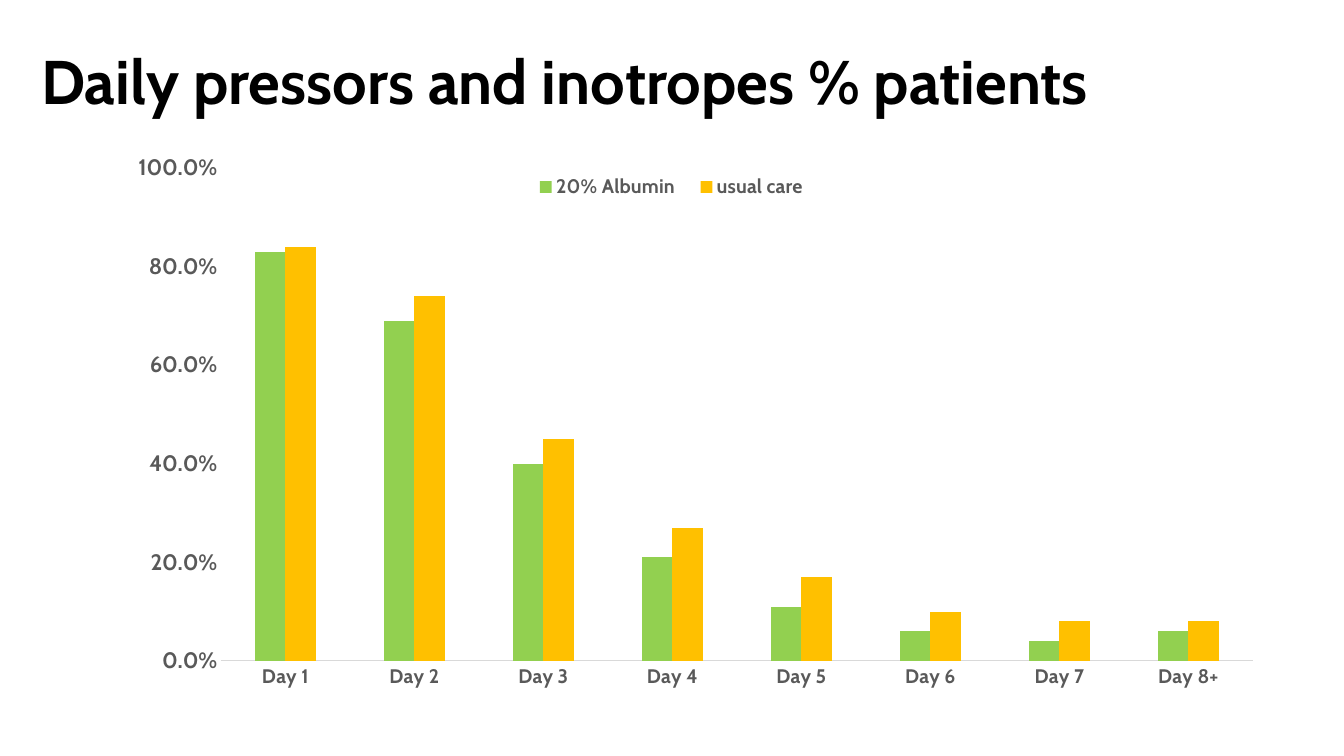
"""Build a slide with a clustered column chart of daily pressor and inotrope use."""
from pptx import Presentation, oxml
from pptx import util as u
from pptx.chart.data import CategoryChartData
from pptx.dml.color import RGBColor
from pptx.enum import chart as kinds, text
from pptx.oxml.ns import nsdecls, qn

PX = 914400 / 100.8
FONT = "Cabin"
GREY = "595959"
CHART_BOX = (115, 143, 1162, 598)
PLOT_BOX = (221, 168, 1032, 493)
LEGEND_BOX = (521, 173, 301, 28)
SERIES = [
    ("20% Albumin", "92D050", (0.83, 0.69, 0.4, 0.21, 0.11, 0.06, 0.04, 0.06)),
    ("usual care", "FFC000", (0.84, 0.74, 0.45, 0.27, 0.17, 0.1, 0.08, 0.08)),
]


def style_font(font, size, colour, bold=True):
    """Set typeface, point size, hex colour and weight."""
    font.name, font.size, font.bold = FONT, u.Pt(size), bold
    font.color.rgb = RGBColor.from_string(colour)


def place_inside(element, index, box, target=""):
    """Give a chart part a fixed layout from its box in slide px."""
    left, top, width, height = CHART_BOX
    fractions = {"x": (box[0] - left) / width, "y": (box[1] - top) / height,
                 "w": box[2] / width, "h": box[3] / height}
    modes = '<c:xMode val="edge"/><c:yMode val="edge"/>'
    sizes = "".join(f'<c:{key} val="{value:.4f}"/>' for key, value in fractions.items())
    for old in element.findall(qn("c:layout")):
        element.remove(old)
    element.insert(index, oxml.parse_xml(
        f'<c:layout {nsdecls("c")}><c:manualLayout>{target}{modes}{sizes}'
        "</c:manualLayout></c:layout>"))


deck = Presentation()
deck.slide_width, deck.slide_height = round(1344 * PX), round(756 * PX)
page = deck.slides.add_slide(deck.slide_layouts[5])

title = page.shapes.title
title.left, title.top, title.width, title.height = (
    round(length * PX) for length in (31, 12, 1159, 146))
frame = title.text_frame
frame.word_wrap = True
frame.auto_size = text.MSO_AUTO_SIZE.NONE
frame.vertical_anchor = text.MSO_ANCHOR.MIDDLE
para = frame.paragraphs[0]
para.alignment = text.PP_ALIGN.LEFT
para.line_spacing = 0.9
span = para.add_run()
span.text = "Daily pressors and inotropes % patients"
style_font(span.font, 44, "000000")

data = CategoryChartData(number_format="0.0%")
data.categories = [f"Day {day}" for day in range(1, 8)] + ["Day 8+"]
for name, colour, values in SERIES:
    data.add_series(name, values)
chart = page.shapes.add_chart(
    kinds.XL_CHART_TYPE.COLUMN_CLUSTERED,
    *(round(length * PX) for length in CHART_BOX), data).chart
style_font(chart.font, 10, "000000", False)
chart.has_title = False

plot = chart.plots[0]
plot.vary_by_categories = False
plot.gap_width, plot.overlap = 219, 0
for series, (name, colour, values) in zip(plot.series, SERIES):
    series.format.fill.solid()
    series.format.fill.fore_color.rgb = RGBColor.from_string(colour)
    series.invert_if_negative = False

days, shares = chart.category_axis, chart.value_axis
for axis, size in ((days, 14), (shares, 16)):
    axis.has_major_gridlines = False
    axis.major_tick_mark = axis.minor_tick_mark = kinds.XL_TICK_MARK.NONE
    style_font(axis.tick_labels.font, size, GREY)
days.format.line.color.rgb = RGBColor.from_string("D9D9D9")
days.format.line.width = u.Pt(0.75)
shares.format.line.fill.background()
shares.minimum_scale, shares.maximum_scale, shares.major_unit = 0, 1, 0.2
shares.tick_labels.number_format = "0.0%"
shares.tick_labels.number_format_is_linked = False

chart.has_legend = True
legend = chart.legend
legend.position = kinds.XL_LEGEND_POSITION.BOTTOM
legend.include_in_layout = False
style_font(legend.font, 14, GREY)
plot_area = chart.element.find(".//" + qn("c:plotArea"))
place_inside(plot_area, 0, PLOT_BOX, '<c:layoutTarget val="inner"/>')
place_inside(chart.element.find(".//" + qn("c:legend")), 1, LEGEND_BOX)

deck.save("out.pptx")
